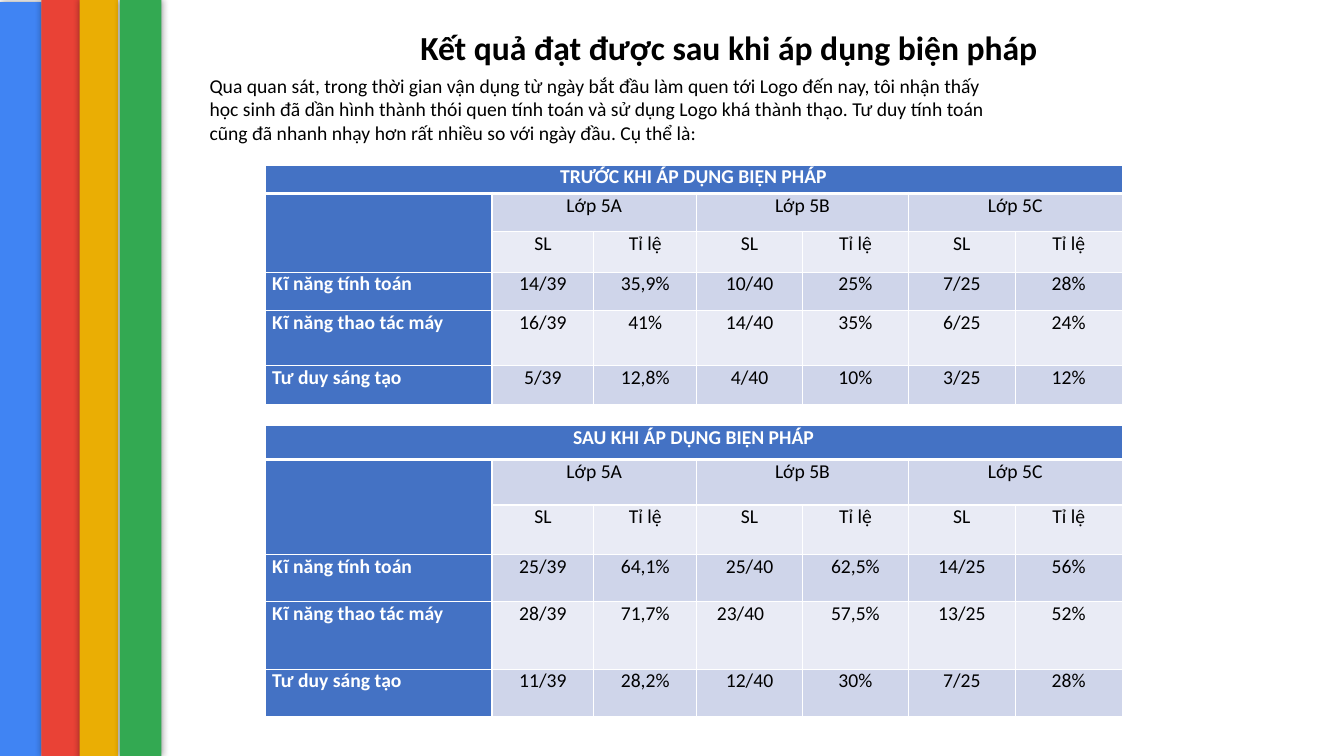
"""Build a slide comparing class results before and after the teaching method."""
import pptx
import pptx.dml.color
import pptx.enum.shapes
import pptx.enum.text
import pptx.oxml
import pptx.oxml.ns
import pptx.util

PX = 9144
NS = pptx.oxml.ns.nsdecls("a")
ALIGN = pptx.enum.text.PP_ALIGN
COLORS = {
    "blue": "4084F3", "red": "E94236", "yellow": "EAAE04", "green": "33A952",
    "header": "4472C4", "band_dark": "CFD5EA", "band_light": "E9EBF5",
    "white": "FFFFFF", "black": "000000",
}


def rgb(name):
    return pptx.dml.color.RGBColor.from_string(COLORS[name])


def write(tf, text, size=14, color="black", bold=False, align=ALIGN.LEFT, before=0):
    p = tf.paragraphs[0]
    p.alignment = align
    p.space_before = pptx.util.Pt(before)
    r = p.add_run()
    r.text = text
    r.font.name = "Calibri"
    r.font.size = pptx.util.Pt(size)
    r.font.bold = bold
    r.font.color.rgb = rgb(color)


prs = pptx.Presentation()
prs.slide_width = 1333 * PX
prs.slide_height = 750 * PX
s = prs.slides.add_slide(prs.slide_layouts[6])

stripes = [
    ("blue", 0, 2, 41, 748),
    ("red", 41, 0, 41, 750),
    ("yellow", 79, 0, 38, 753),
    ("green", 119, 0, 41, 750),
]
for color, *box in stripes:
    sp = s.shapes.add_shape(pptx.enum.shapes.MSO_SHAPE.RECTANGLE, *[v * PX for v in box])
    sp.fill.solid()
    sp.fill.fore_color.rgb = rgb(color)
    sp.line.fill.background()
    sp.shadow.inherit = False
    effects = sp._element.spPr.find(pptx.oxml.ns.qn("a:effectLst"))
    effects.append(pptx.oxml.parse_xml(
        f'<a:outerShdw {NS} blurRad="63500" dist="0" dir="0" algn="ctr" rotWithShape="0">'
        f'<a:srgbClr val="{COLORS["black"]}"><a:alpha val="40000"/></a:srgbClr></a:outerShdw>'))

intro = (
    "Qua quan sát, trong thời gian vận dụng từ ngày bắt đầu làm quen tới Logo đến nay, "
    "tôi nhận thấy học sinh đã dần hình thành thói quen tính toán và sử dụng Logo khá "
    "thành thạo. Tư duy tính toán cũng đã nhanh nhạy hơn rất nhiều so với ngày đầu. "
    "Cụ thể là:"
)
texts = [
    ("Kết quả đạt được sau khi áp dụng biện pháp", (407, 22, 646, 50), False,
     {"size": 24, "bold": True}),
    (intro, (198, 68, 790, 81), True, {}),
]
for text, box, wrap, fmt in texts:
    tf = s.shapes.add_textbox(*[v * PX for v in box]).text_frame
    tf.word_wrap = wrap
    write(tf, text, **fmt)

col_widths = [225, 101, 102, 105, 105, 106, 106]
class_row = ["", "Lớp 5A", "", "Lớp 5B", "", "Lớp 5C", ""]
unit_row = [""] + ["SL", "Tỉ lệ"] * 3
skills = ["Kĩ năng tính toán", "Kĩ năng thao tác máy", "Tư duy sáng tạo"]
tables = [
    ("TRƯỚC KHI ÁP DỤNG BIỆN PHÁP", 164, [28, 38, 40, 38, 55, 38], [
        ["14/39", "35,9%", "10/40", "25%", "7/25", "28%"],
        ["16/39", "41%", "14/40", "35%", "6/25", "24%"],
        ["5/39", "12,8%", "4/40", "10%", "3/25", "12%"],
    ]),
    ("SAU KHI ÁP DỤNG BIỆN PHÁP", 422, [34, 45, 49, 47, 67, 47], [
        ["25/39", "64,1%", "25/40", "62,5%", "14/25", "56%"],
        ["28/39", "71,7%", "23/40", "57,5%", "13/25", "52%"],
        ["11/39", "28,2%", "12/40", "30%", "7/25", "28%"],
    ]),
]
for title, top, row_heights, results in tables:
    rows = [[title] + [""] * 6, class_row, unit_row]
    rows += [[skill] + values for skill, values in zip(skills, results)]
    table = s.shapes.add_table(
        len(rows), len(col_widths), 263 * PX, top * PX,
        sum(col_widths) * PX, sum(row_heights) * PX).table
    table.first_row = False
    table.horz_banding = False
    for col, width in zip(table.columns, col_widths):
        col.width = width * PX
    for row, height in zip(table.rows, row_heights):
        row.height = height * PX

    table.cell(0, 0).merge(table.cell(0, 6))
    table.cell(1, 0).merge(table.cell(2, 0))
    for c in (1, 3, 5):
        table.cell(1, c).merge(table.cell(1, c + 1))

    for r, values in enumerate(rows):
        for c, value in enumerate(values):
            cell = table.cell(r, c)
            cell.margin_left = cell.margin_right = 7 * PX
            cell.margin_top = cell.margin_bottom = 0
            borders = {"L": 1, "R": 1, "T": 3 if r == 1 else 1, "B": 3 if r == 0 else 1}
            for side, width in borders.items():
                cell._tc.get_or_add_tcPr().append(pptx.oxml.parse_xml(
                    f'<a:ln{side} {NS} w="{width * 12700}"><a:solidFill>'
                    f'<a:srgbClr val="{COLORS["white"]}"/></a:solidFill></a:ln{side}>'))
            heading = r == 0 or c == 0
            band = "band_dark" if r % 2 else "band_light"
            cell.fill.solid()
            cell.fill.fore_color.rgb = rgb("header" if heading else band)
            align = ALIGN.JUSTIFY if c == 0 and r > 0 else ALIGN.CENTER
            if value == "23/40":
                align = ALIGN.LEFT
                cell.margin_left = 20 * PX
            if value:
                write(cell.text_frame, value, color="white" if heading else "black",
                      bold=heading, align=align, before=6 if r else 0)

prs.save("out.pptx")
